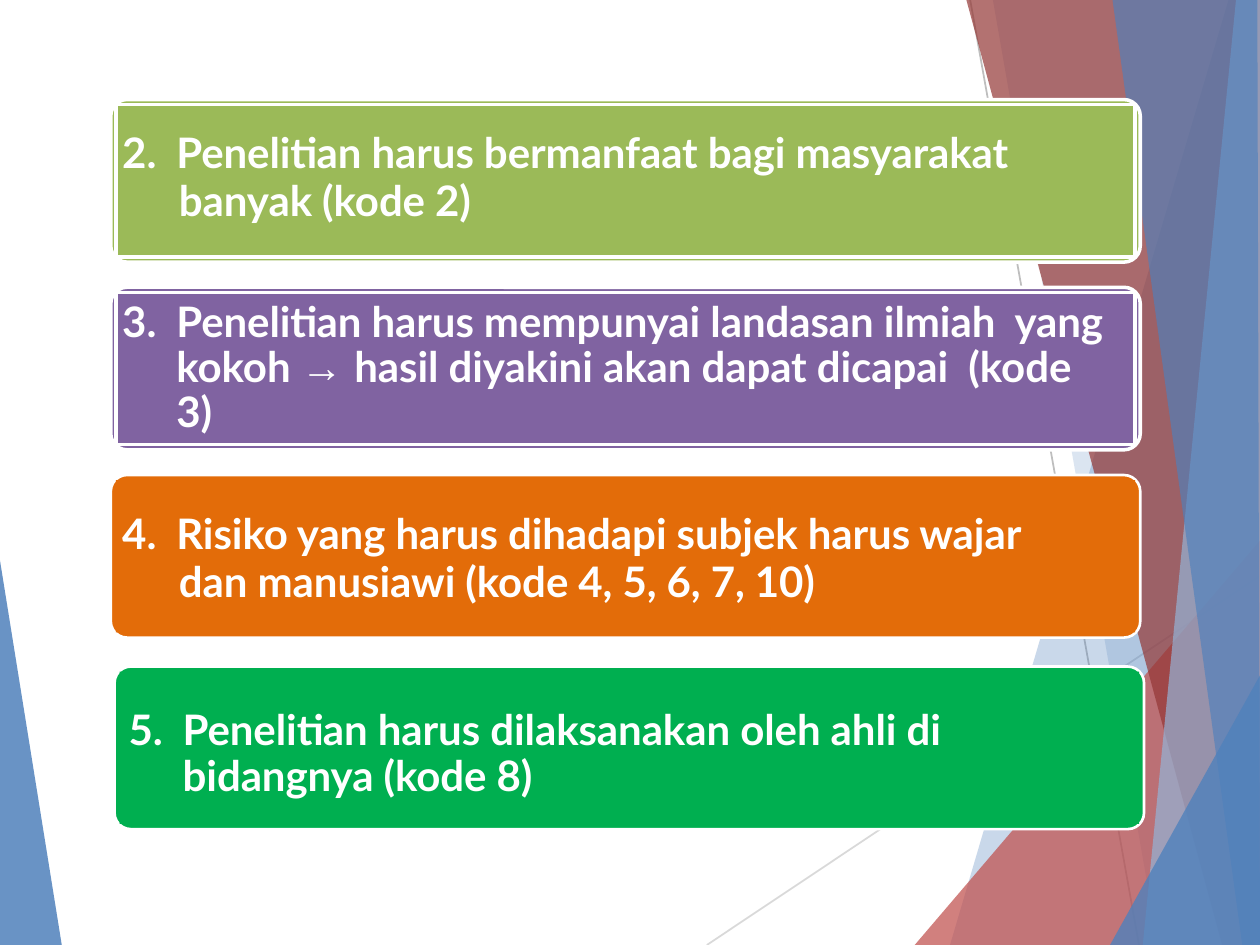
from lxml.etree import SubElement
from pptx import Presentation
from pptx.dml.color import RGBColor
from pptx.enum.shapes import MSO_CONNECTOR as Connector, MSO_SHAPE as Preset
from pptx.enum.text import MSO_ANCHOR as Anchor, MSO_AUTO_SIZE as AutoSize, PP_ALIGN as Align
from pptx.oxml.ns import qn
from pptx.util import Inches, Pt

WIDTH, HEIGHT = Inches(10), Inches(7.5)
COLORS = {
    "white": "FFFFFF", "blue": "4F81BC", "sky": "94B3D6", "red": "C0504D", "maroon": "943735",
    "pale": "D9D9D9", "gray": "BEBEBE",
    "green": "9BBA58", "purple": "8063A1", "orange": "E36C09", "emerald": "00AF50",
}

LEFT_FACET = ("blue", 85, [(0, 59.33), (0, 100), (4.9, 100)])
RAYS = [("pale", (56.1, 100), (100, 60.93)), ("gray", (77, 0), (90.4, 100))]
RIGHT_FACETS = [
    ("blue", 30, [(97.5, 0), (75.4, 100), (100, 100), (100, 0)]),
    ("blue", 20, [(100, 0), (78.8, 0), (91.9, 100), (100, 100)]),
    ("red", 72, [(100, 57.2), (72.6, 100), (100, 100)]),
    ("maroon", 70, [(100, 0), (76.7, 0), (97, 100), (100, 100)]),
    ("sky", 70, [(100, 0), (98.1, 0), (90.7, 100), (100, 100)]),
    ("blue", 65, [(99.8, 0), (88.3, 0), (98.6, 100), (100, 100), (99.8, 3.6)]),
    ("blue", 80, [(100, 71.47), (88.1, 100), (100, 100)]),
]

CARD_LEFT, CARD_TOP, CARD_PITCH = 0.88, 0.79, 1.49
CARD_WIDTH, CARD_HEIGHT, CARD_INSET = 8.17, 1.29, 0.04
CARDS = [("green", 2, 2, 0), ("purple", 2, 2, 0), ("orange", 1.5, 0, 0), ("emerald", 1.5, 0, 0.03)]

PRINCIPLES = [
    (2, 1, Pt(27.4), 0.43, ["Penelitian harus bermanfaat bagi masyarakat"]),
    (None, 0, Pt(27.4), 0.45, ["banyak (kode 2)"]),
    (3, 43.7, 0.9, 0.43, ["Penelitian harus mempunyai landasan ilmiah  yang kokoh ", "→ ",
                          "hasil diyakini akan dapat dicapai  (kode 3)"]),
    (4, 41.8, Pt(27.4), 0.43, ["Risiko yang harus dihadapi subjek harus wajar"]),
    (None, 0, Pt(27.4), 0.45, ["dan manusiawi (kode 4, 5, 6, 7, 10)"]),
    (5, 58.6, Pt(26), 0.48, ["Penelitian harus dilaksanakan oleh ahli di bidangnya (kode 8)"]),
]


def color(name):
    return RGBColor.from_string(COLORS[name])


def position(point):
    return round(WIDTH * point[0] / 100), round(HEIGHT * point[1] / 100)


def paint(shape, fill, line_width=0):
    shape.shadow.inherit = False
    shape.fill.solid()
    shape.fill.fore_color.rgb = color(fill)
    if line_width:
        shape.line.color.rgb = color("white")
        shape.line.width = Pt(line_width)
    else:
        shape.line.fill.background()


def add_facet(slide, fill, opacity, points):
    first, *rest = map(position, points)
    builder = slide.shapes.build_freeform(*first, scale=1.0)
    builder.add_line_segments(rest, close=True)
    shape = builder.convert_to_shape()
    paint(shape, fill)
    solid = shape.fill.fore_color._xFill.find(qn("a:srgbClr"))
    SubElement(solid, qn("a:alpha"), val=str(opacity * 1000))


def add_ray(slide, line_color, start, end):
    ray = slide.shapes.add_connector(Connector.STRAIGHT, *position(start), *position(end))
    ray.line.color.rgb = color(line_color)
    ray.line.width = Pt(1)
    SubElement(ray._element.spPr, qn("a:effectLst"))


def add_card(slide, row, fill, outer_line, inner_line, shift):
    left = CARD_LEFT + shift
    top = CARD_TOP + row * CARD_PITCH + shift
    card = slide.shapes.add_group_shape()
    layers = [(Preset.ROUNDED_RECTANGLE, 0, outer_line), (Preset.RECTANGLE, CARD_INSET, inner_line)]
    for preset, inset, line_width in layers:
        box = (left + inset, top + inset, CARD_WIDTH - 2 * inset, CARD_HEIGHT - 2 * inset)
        shape = card.shapes.add_shape(preset, *map(Inches, box))
        if preset == Preset.ROUNDED_RECTANGLE:
            shape.adjustments[0] = 0.1
        paint(shape, fill, line_width)


def set_marker(paragraph, number, indent):
    properties = paragraph._p.get_or_add_pPr()
    properties.set("marL", str(Inches(indent)))
    properties.set("indent", str(-Inches(0.43) if number else 0))
    if number:
        SubElement(properties, qn("a:buFont"), typeface="Lato")
        SubElement(properties, qn("a:buAutoNum"), type="arabicPeriod", startAt=str(number))
    else:
        SubElement(properties, qn("a:buNone"))


def add_run(paragraph, text):
    run = paragraph.add_run()
    run.text = text
    is_arrow = text.startswith("→")
    run.font.name = "Arial" if is_arrow else "Lato"
    run.font.bold = not is_arrow
    run.font.size = Pt(24)
    run.font.color.rgb = color("white")
    run._r.get_or_add_rPr().set("spc", "-5")


def fill_list(slide):
    body = slide.placeholders[1]
    body.left, body.top, body.width, body.height = map(Inches, (0.97, 1.01, 7.8, 5.29))
    slide.shapes._spTree.append(body._element)
    frame = body.text_frame
    frame.word_wrap = True
    frame.auto_size = AutoSize.NONE
    frame.vertical_anchor = Anchor.TOP
    frame.margin_left = frame.margin_right = frame.margin_bottom = 0
    frame.margin_top = Inches(0.01)
    for index, (number, gap, spacing, indent, texts) in enumerate(PRINCIPLES):
        paragraph = frame.add_paragraph() if index else frame.paragraphs[0]
        paragraph.alignment = Align.LEFT
        paragraph.line_spacing = spacing
        paragraph.space_before = Pt(gap)
        paragraph.space_after = Pt(0)
        set_marker(paragraph, number, indent)
        for text in texts:
            add_run(paragraph, text)


def main():
    presentation = Presentation()
    presentation.slide_width, presentation.slide_height = WIDTH, HEIGHT
    slide = presentation.slides.add_slide(presentation.slide_layouts[1])
    title = slide.shapes.title._element
    title.getparent().remove(title)
    add_facet(slide, *LEFT_FACET)
    for ray in RAYS:
        add_ray(slide, *ray)
    for facet in RIGHT_FACETS:
        add_facet(slide, *facet)
    for row, card in enumerate(CARDS):
        add_card(slide, row, *card)
    fill_list(slide)
    presentation.save("out.pptx")


if __name__ == "__main__":
    main()
